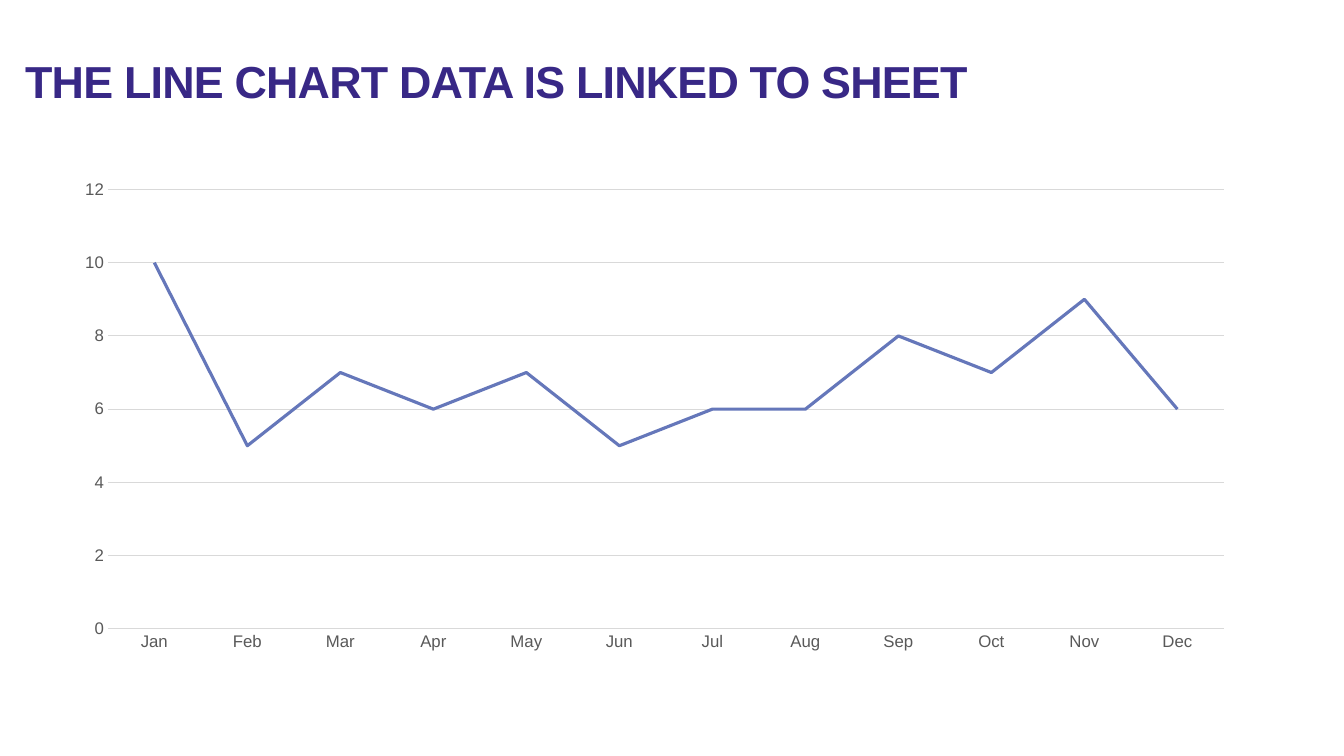
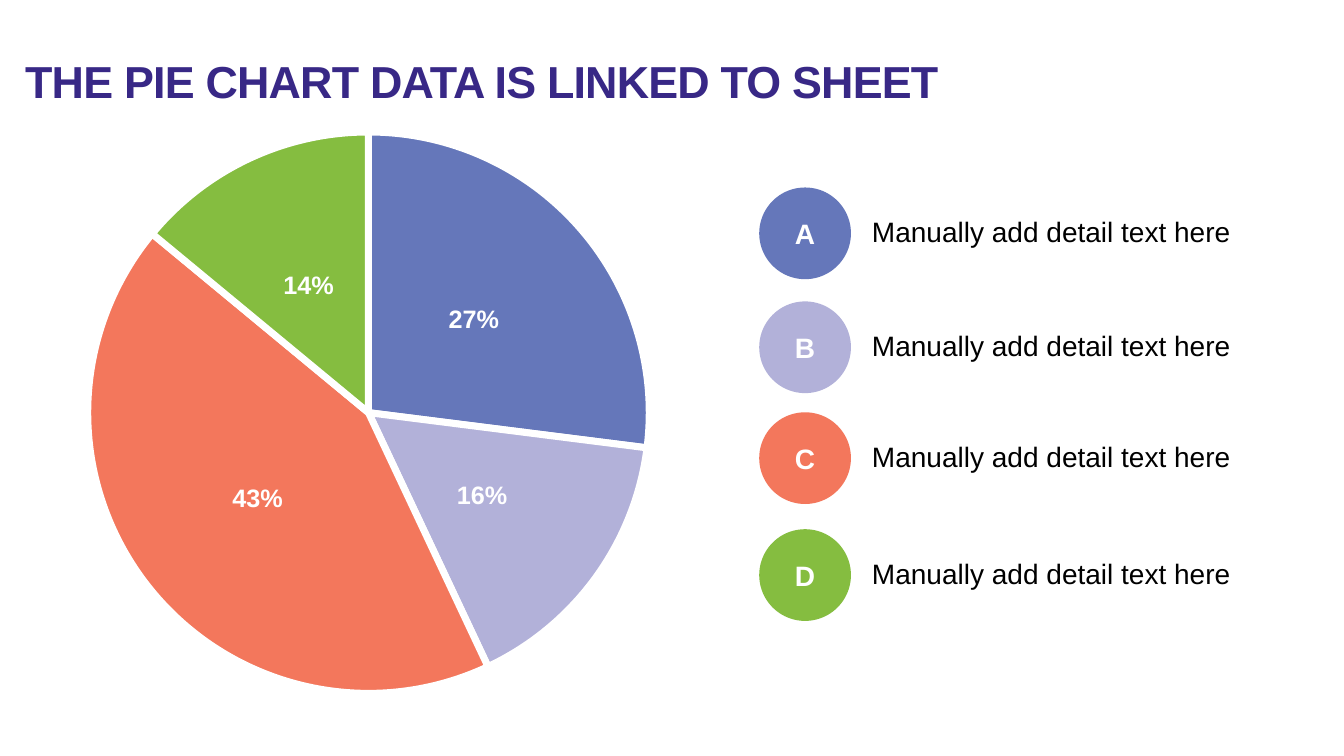
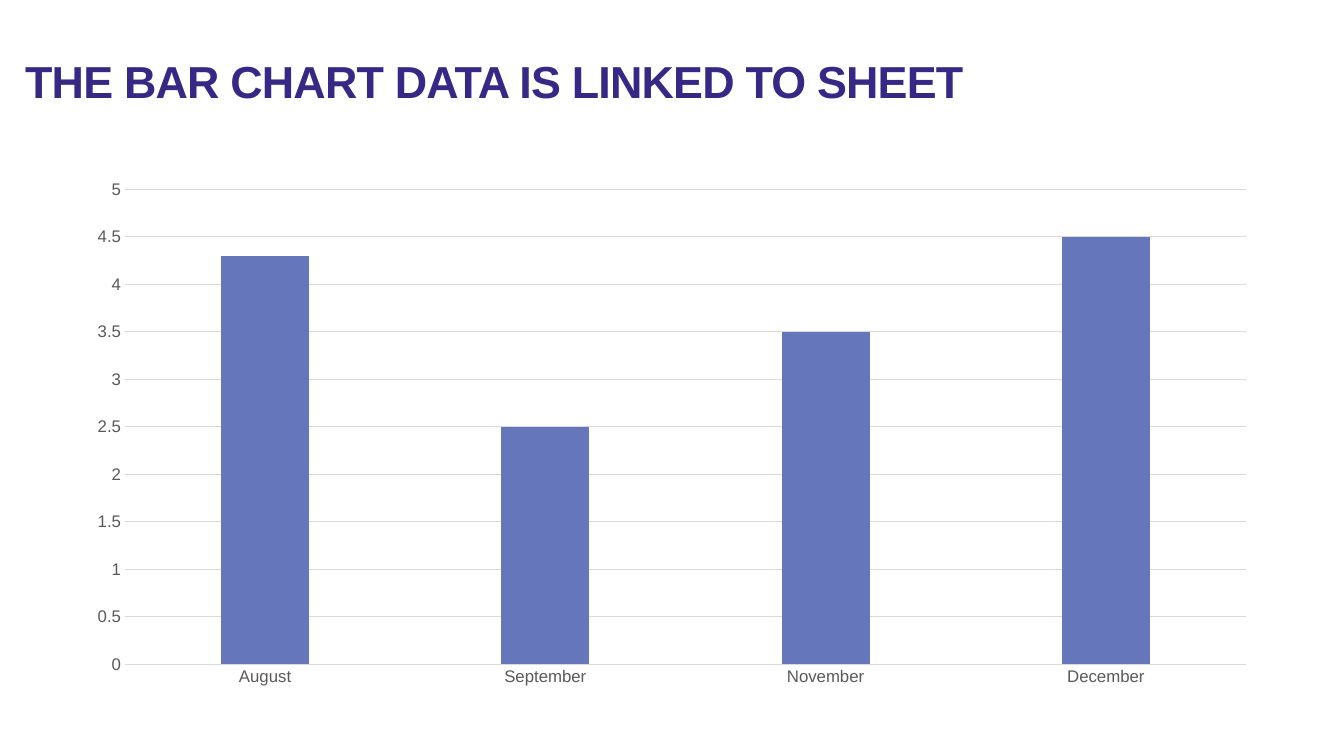
from dataclasses import dataclass
from lxml import etree
from pptx import Presentation
from pptx.chart.data import CategoryChartData
from pptx.dml.color import RGBColor
from pptx.enum.chart import XL_CHART_TYPE, XL_LABEL_POSITION, XL_MARKER_STYLE, XL_TICK_MARK
from pptx.enum.shapes import MSO_SHAPE
from pptx.enum.text import MSO_ANCHOR, PP_ALIGN
from pptx.oxml.ns import qn
from pptx.util import Inches, Pt


@dataclass(frozen=True)
class Theme:
    font: str = "Arial"
    title_color: RGBColor = RGBColor.from_string("382886")
    text_color: RGBColor = RGBColor.from_string("000000")
    axis_color: RGBColor = RGBColor.from_string("595959")
    grid_color: RGBColor = RGBColor.from_string("D9D9D9")
    white: RGBColor = RGBColor.from_string("FFFFFF")
    accents: tuple = tuple(map(RGBColor.from_string, ("6577BA", "B2B1D9", "F3775C", "85BD40")))
    title_size: Pt = Pt(32)
    detail_size: Pt = Pt(20)
    label_size: Pt = Pt(18)
    axis_size: Pt = Pt(12)


theme = Theme()
presentation = Presentation()
presentation.slide_width = Inches(13.33)
presentation.slide_height = Inches(7.5)


def add_text(shape, text, size, color, bold=False):
    """Write one formatted line into a shape and return its paragraph."""
    shape.text_frame.word_wrap = True
    paragraph = shape.text_frame.paragraphs[0]
    paragraph.text = text
    font = paragraph.runs[0].font
    font.name, font.size, font.bold = theme.font, size, bold
    font.color.rgb = color
    return paragraph


def add_chart_slide(kind, chart_type, categories, values, frame, plot):
    """Add a titled slide with one chart; frame and plot are left, top, width, height."""
    slide = presentation.slides.add_slide(presentation.slide_layouts[6])

    # Title
    title = slide.shapes.add_textbox(Inches(0.25), Inches(0.59), Inches(11.5), Inches(0.94))
    text_frame = title.text_frame
    text_frame.margin_left = text_frame.margin_right = text_frame.margin_top = 0
    text_frame.vertical_anchor = MSO_ANCHOR.TOP
    paragraph = add_text(title, f"THE {kind} CHART DATA IS LINKED TO SHEET",
                         theme.title_size, theme.title_color, bold=True)
    paragraph.line_spacing = 0.9
    paragraph.runs[0].font._element.set("spc", "-60")

    # Chart
    data = CategoryChartData()
    data.categories = categories
    data.add_series("Series 1", values)
    chart = slide.shapes.add_chart(chart_type, *map(Inches, frame), data).chart
    chart.has_title = chart.has_legend = False
    chart.font.name = theme.font
    chart.plots[0].vary_by_categories = False

    # Plot area as fractions of the chart frame
    plot_area = chart._chartSpace.chart.plotArea
    for old_layout in plot_area.findall(qn("c:layout")):
        plot_area.remove(old_layout)
    layout = etree.Element(qn("c:layout"))
    manual = etree.SubElement(layout, qn("c:manualLayout"))
    left, top, width, height = frame
    settings = {"layoutTarget": "inner", "xMode": "edge", "yMode": "edge",
                "x": (plot[0] - left) / width, "y": (plot[1] - top) / height,
                "w": plot[2] / width, "h": plot[3] / height}
    for name, value in settings.items():
        etree.SubElement(manual, qn(f"c:{name}")).set("val", str(value))
    plot_area.insert(0, layout)
    return slide, chart


# Line chart
months = ["Jan", "Feb", "Mar", "Apr", "May", "Jun", "Jul", "Aug", "Sep", "Oct", "Nov", "Dec"]
_, line_chart = add_chart_slide("LINE", XL_CHART_TYPE.LINE, months,
                                [10, 5, 7, 6, 7, 5, 6, 6, 8, 7, 9, 6],
                                (0.61, 1.7, 11.78, 4.86), (1.07, 1.88, 11.07, 4.36))
line_series = line_chart.plots[0].series[0]
line_series.smooth = False
line_series.marker.style = XL_MARKER_STYLE.NONE
line_series.format.line.color.rgb = theme.accents[0]
line_series.format.line.width = Pt(2.25)

# Pie chart
pie_slide, pie_chart = add_chart_slide("PIE", XL_CHART_TYPE.PIE, ["1", "2", "3", "4"],
                                       [27, 16, 43, 14],
                                       (0.73, 1.15, 5.85, 5.88), (0.87, 1.31, 5.57, 5.57))
pie_plot = pie_chart.plots[0]
pie_plot.vary_by_categories = True
for index, color in enumerate(theme.accents):
    slice_format = pie_plot.series[0].points[index].format
    slice_format.fill.solid()
    slice_format.fill.fore_color.rgb = color
    slice_format.line.color.rgb = theme.white
    slice_format.line.width = Pt(5)
labels = pie_plot.series[0].data_labels
labels.show_percentage = True
labels.show_value = False
labels.number_format, labels.number_format_is_linked = "0%", False
labels.position = XL_LABEL_POSITION.CENTER
labels.font.name, labels.font.size, labels.font.bold = theme.font, theme.label_size, True
labels.font.color.rgb = theme.white

# Pie key: lettered circles with detail text
for letter, color, top in zip("ABCD", theme.accents, (1.86, 2.99, 4.09, 5.25)):
    circle = pie_slide.shapes.add_shape(MSO_SHAPE.OVAL, Inches(7.53), Inches(top),
                                        Inches(0.91), Inches(0.91))
    circle.shadow.inherit = False
    circle.fill.solid()
    circle.fill.fore_color.rgb = color
    circle.line.fill.background()
    circle.text_frame.vertical_anchor = MSO_ANCHOR.MIDDLE
    paragraph = add_text(circle, letter, theme.detail_size, theme.white, bold=True)
    paragraph.alignment = PP_ALIGN.CENTER
    detail = pie_slide.shapes.add_textbox(Inches(8.55), Inches(top + 0.22),
                                          Inches(4.13), Inches(0.44))
    add_text(detail, "Manually add detail text here", theme.detail_size, theme.text_color)

# Bar chart
_, bar_chart = add_chart_slide("BAR", XL_CHART_TYPE.COLUMN_CLUSTERED,
                               ["August", "September", "November", "December"],
                               [4.3, 2.5, 3.5, 4.5],
                               (0.73, 1.69, 11.87, 5.22), (1.24, 1.88, 11.12, 4.71))
bar_plot = bar_chart.plots[0]
bar_plot.gap_width, bar_plot.overlap = 219, -27
bar_fill = bar_plot.series[0].format.fill
bar_fill.solid()
bar_fill.fore_color.rgb = theme.accents[0]

# Axes shared by the line and bar charts
for chart, maximum, step in ((line_chart, 12, 2), (bar_chart, 5, 0.5)):
    value_axis, category_axis = chart.value_axis, chart.category_axis
    for axis in (value_axis, category_axis):
        axis.major_tick_mark = axis.minor_tick_mark = XL_TICK_MARK.NONE
        font = axis.tick_labels.font
        font.name, font.size = theme.font, theme.axis_size
        font.color.rgb = theme.axis_color
    value_axis.minimum_scale, value_axis.maximum_scale = 0, maximum
    value_axis.major_unit = step
    value_axis.format.line.fill.background()
    value_axis.has_major_gridlines = True
    for line in (value_axis.major_gridlines.format.line, category_axis.format.line):
        line.color.rgb = theme.grid_color
        line.width = Pt(0.75)

presentation.save("out.pptx")
